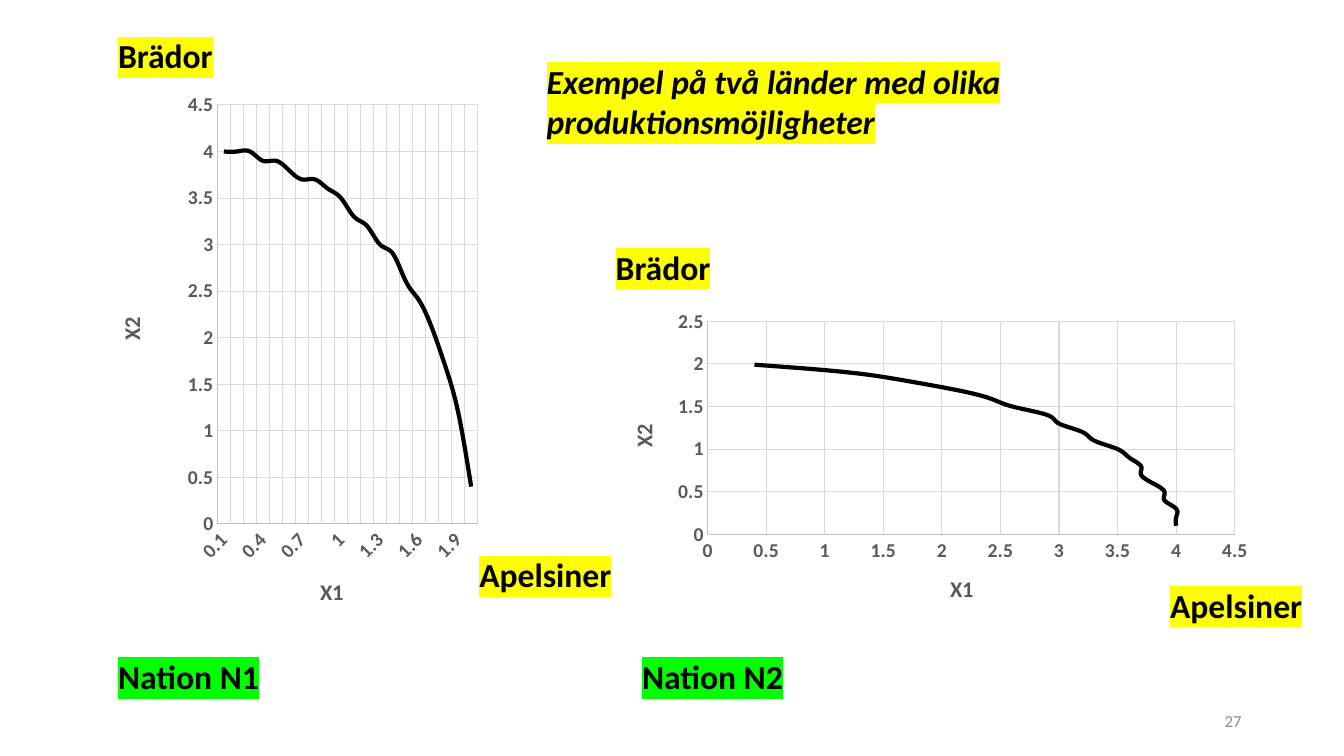
from dataclasses import dataclass
from math import sqrt

from lxml import etree
from pptx import Presentation
from pptx.chart.axis import _BaseAxis
from pptx.chart.chart import Chart
from pptx.chart.data import CategoryChartData, XyChartData
from pptx.dml.color import RGBColor
from pptx.enum.chart import XL_CHART_TYPE, XL_TICK_MARK
from pptx.enum.text import MSO_ANCHOR, MSO_AUTO_SIZE, PP_ALIGN
from pptx.oxml import parse_xml
from pptx.oxml.ns import nsdecls, qn
from pptx.slide import Slide
from pptx.text.text import TextFrame
from pptx.util import Emu, Pt

EMU_PER_PX = 9525
FONT = "Calibri"
BLACK = RGBColor(0x00, 0x00, 0x00)
YELLOW = RGBColor(0xFF, 0xFF, 0x00)
GREEN = RGBColor(0x00, 0xFF, 0x00)
DARK_GREY = RGBColor(0x59, 0x59, 0x59)
PAGE_GREY = RGBColor(0x8C, 0x8C, 0x8C)
AXIS_GREY = RGBColor(0xBF, 0xBF, 0xBF)
GRID_GREY = RGBColor(0xD9, 0xD9, 0xD9)
LINE_CHART = XL_CHART_TYPE.LINE
SCATTER_CHART = XL_CHART_TYPE.XY_SCATTER_SMOOTH_NO_MARKERS
NO_TICK = XL_TICK_MARK.NONE
LEFT, CENTER, RIGHT = PP_ALIGN.LEFT, PP_ALIGN.CENTER, PP_ALIGN.RIGHT
TOP, MIDDLE = MSO_ANCHOR.TOP, MSO_ANCHOR.MIDDLE
FIT_SHAPE = MSO_AUTO_SIZE.SHAPE_TO_FIT_TEXT
UPRIGHT, SLANTED, VERTICAL = 0, -45, -90


@dataclass(frozen=True)
class Area:
    left: int
    top: int
    width: int = 0
    height: int = 0

    def emu(self) -> tuple[Emu, ...]:
        sides = (self.left, self.top, self.width, self.height)
        return tuple(Emu(side * EMU_PER_PX) for side in sides)


@dataclass(frozen=True)
class Label:
    text: str
    area: Area
    marker: RGBColor


@dataclass(frozen=True)
class Graph:
    kind: XL_CHART_TYPE
    area: Area
    plot: Area
    x_title: Area
    y_title: Area
    x_angle: int
    y_maximum: float


LABELS = (
    Label("Nation N1", Area(103, 620, 155, 48), GREEN),
    Label("Nation N2", Area(602, 620, 155, 48), GREEN),
    Label("Brädor", Area(103, 29, 110, 48), YELLOW),
    Label("Brädor", Area(577, 230, 110, 48), YELLOW),
    Label("Apelsiner", Area(447, 523, 147, 48), YELLOW),
    Label("Apelsiner", Area(1105, 552, 147, 48), YELLOW),
)
GRAPHS = (
    Graph(LINE_CHART, Area(89, 78, 372, 523), Area(207, 100, 248, 399),
          Area(301, 546), Area(107, 298), SLANTED, 4.5),
    Graph(SCATTER_CHART, Area(577, 289, 623, 308), Area(674, 306, 502, 203),
          Area(901, 543), Area(595, 400), UPRIGHT, 2.5),
)
SMALL_OUTPUT = [step / 10 for step in range(1, 20)] + [1.99]
LARGE_OUTPUT = [round(2 * sqrt(4 - amount**2), 1) for amount in SMALL_OUTPUT]


def write(frame: TextFrame, text: str, *, size: int = 24, color: RGBColor = BLACK,
          marker: RGBColor | None = None, bold: bool = True, italic: bool = False,
          align: PP_ALIGN = LEFT, anchor: MSO_ANCHOR = TOP) -> None:
    frame.word_wrap = False
    frame.vertical_anchor = anchor
    frame.text = text
    for para in frame.paragraphs:
        para.alignment = align
        para.line_spacing = 1.0
        span = para.runs[0]
        span.font.size = Pt(size)
        span.font.bold = bold
        span.font.italic = italic
        span.font.color.rgb = color
        span.font.name = FONT
        if marker is not None:
            highlight = parse_xml(
                f'<a:highlight {nsdecls("a")}><a:srgbClr val="{marker}"/></a:highlight>'
            )
            span.font._element.find(qn("a:solidFill")).addnext(highlight)


def manual_layout(area: Area, chart_area: Area, inner: bool) -> etree._Element:
    layout = etree.Element(qn("c:layout"))
    manual = etree.SubElement(layout, qn("c:manualLayout"))
    entries: list[tuple[str, str | float]] = [("layoutTarget", "inner")] if inner else []
    entries += [
        ("xMode", "edge"),
        ("yMode", "edge"),
        ("x", (area.left - chart_area.left) / chart_area.width),
        ("y", (area.top - chart_area.top) / chart_area.height),
    ]
    if inner:
        entries += [("w", area.width / chart_area.width),
                    ("h", area.height / chart_area.height)]
    for name, value in entries:
        etree.SubElement(manual, qn(f"c:{name}")).set("val", str(value))
    return layout


def place_plot(chart: Chart, graph: Graph) -> None:
    plot_area = chart._chartSpace.chart.plotArea
    for layout in plot_area.findall(qn("c:layout")):
        plot_area.remove(layout)
    plot_area.insert(0, manual_layout(graph.plot, graph.area, True))


def rotate(body: etree._Element, angle: int) -> None:
    body.set("rot", str(angle * 60000))
    body.set("vert", "horz")


def format_axis(axis: _BaseAxis, name: str, title_area: Area, chart_area: Area,
                title_angle: int, label_angle: int) -> None:
    axis.major_tick_mark = axis.minor_tick_mark = NO_TICK
    axis.has_major_gridlines = True
    for line, color in ((axis.format.line, AXIS_GREY),
                        (axis.major_gridlines.format.line, GRID_GREY)):
        line.color.rgb = color
        line.width = Pt(0.75)
    labels = axis.tick_labels
    labels.number_format = "General"
    labels.number_format_is_linked = False
    labels.font.size = Pt(14)
    labels.font.bold = True
    labels.font.name = FONT
    labels.font.color.rgb = DARK_GREY
    rotate(axis._element.find(qn("c:txPr")).find(qn("a:bodyPr")), label_angle)
    frame = axis.axis_title.text_frame
    write(frame, name, size=16, color=DARK_GREY, align=CENTER)
    rotate(frame._txBody.find(qn("a:bodyPr")), title_angle)
    title = axis.axis_title._element
    for layout in title.findall(qn("c:layout")):
        title.remove(layout)
    title.find(qn("c:tx")).addnext(manual_layout(title_area, chart_area, False))


def frontier_data(kind: XL_CHART_TYPE) -> CategoryChartData | XyChartData:
    if kind == LINE_CHART:
        data = CategoryChartData()
        data.categories = SMALL_OUTPUT
        data.add_series("Series 1", LARGE_OUTPUT)
        return data
    data = XyChartData()
    series = data.add_series("Series 1")
    for large, small in zip(LARGE_OUTPUT, SMALL_OUTPUT):
        series.add_data_point(large, small)
    return data


def draw_graph(page: Slide, graph: Graph) -> None:
    data = frontier_data(graph.kind)
    chart = page.shapes.add_chart(graph.kind, *graph.area.emu(), data).chart
    chart.has_legend = False
    chart.has_title = False
    chart.font.size = Pt(10)
    chart.font.name = FONT
    chart.font.color.rgb = BLACK
    chart.plots[0].vary_by_categories = False
    series = chart.plots[0].series[0]
    series._element.get_or_add_smooth().val = True
    series.format.line.color.rgb = BLACK
    series.format.line.width = Pt(3)
    format_axis(chart.category_axis, "X1", graph.x_title, graph.area, UPRIGHT, graph.x_angle)
    format_axis(chart.value_axis, "X2", graph.y_title, graph.area, VERTICAL, UPRIGHT)
    scales = [(chart.value_axis, graph.y_maximum)]
    if graph.kind == SCATTER_CHART:
        scales.append((chart.category_axis, 4.5))
    for axis, maximum in scales:
        axis.minimum_scale = 0
        axis.maximum_scale = maximum
        axis.major_unit = 0.5
    place_plot(chart, graph)


def main() -> None:
    deck = Presentation()
    deck.slide_width, deck.slide_height = Area(0, 0, 1280, 720).emu()[2:]
    page = deck.slides.add_slide(deck.slide_layouts[5])
    for graph in GRAPHS:
        draw_graph(page, graph)
    for label in LABELS:
        box = page.shapes.add_textbox(*label.area.emu())
        write(box.text_frame, label.text, marker=label.marker)
        box.text_frame.auto_size = FIT_SHAPE
    title = page.shapes.title
    title.left, title.top, title.width, title.height = Area(511, 53, 455, 87).emu()
    write(title.text_frame, "Exempel på två länder med olika\nproduktionsmöjligheter",
          marker=YELLOW, italic=True)
    title.text_frame.auto_size = FIT_SHAPE
    number = page.shapes.add_textbox(*Area(904, 667, 288, 38).emu())
    write(number.text_frame, "27", size=12, color=PAGE_GREY, bold=False,
          align=RIGHT, anchor=MIDDLE)
    number.text_frame.word_wrap = True
    deck.save("out.pptx")


if __name__ == "__main__":
    main()
